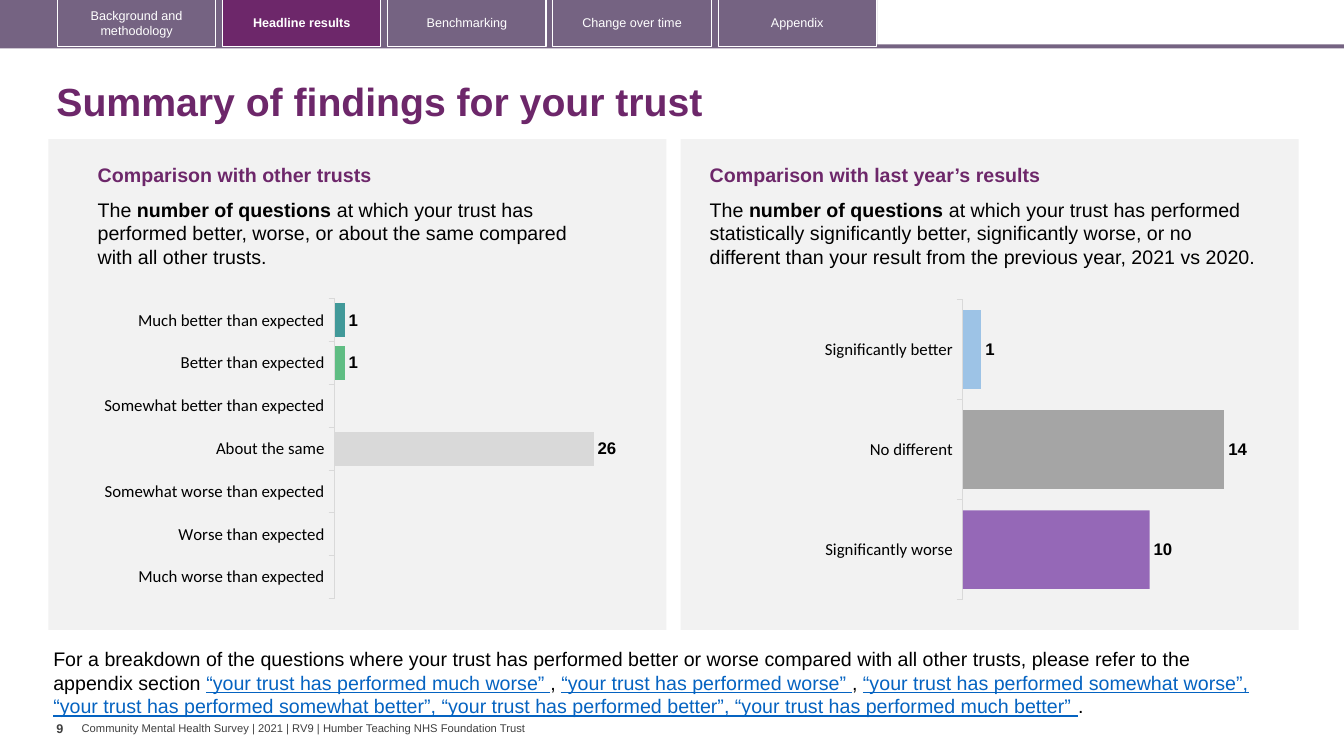
"""Build the summary slide of a trust's survey results."""
import dataclasses

import lxml.etree
import pptx
import pptx.chart.data
import pptx.dml.color
import pptx.enum.chart
import pptx.enum.shapes
import pptx.enum.text
import pptx.oxml
import pptx.oxml.ns
import pptx.util

Inches = pptx.util.Inches
Align = pptx.enum.text.PP_ALIGN
Anchor = pptx.enum.text.MSO_ANCHOR


@dataclasses.dataclass(frozen=True)
class Theme:
    """Hold the colours, fonts and type sizes."""
    plum: str = "6D276A"
    mauve: str = "756382"
    panel: str = "F2F2F2"
    white: str = "FFFFFF"
    black: str = "000000"
    grey: str = "404040"
    axis: str = "D9D9D9"
    link: str = "0563C1"
    teal: str = "419999"
    green: str = "5FBD83"
    lime: str = "A9D18E"
    pale: str = "D9D9D9"
    sand: str = "FFD966"
    gold: str = "F1BE48"
    rust: str = "E87722"
    sky: str = "9DC3E6"
    mid: str = "A5A5A5"
    violet: str = "7030A0"
    font: str = "Arial"
    label: str = "Calibri"
    head: int = 28
    body: int = 14
    chart: int = 12
    small: int = 9
    foot: int = 8


THEME = Theme()


def tint(code):
    """Turn a hex code into a colour."""
    return pptx.dml.color.RGBColor.from_string(code)


def style(font, size=THEME.body, color=THEME.black, bold=False, under=None, name=THEME.font):
    """Format a font."""
    font.name, font.size = name, pptx.util.Pt(size)
    font.bold, font.underline = bold, under
    font.color.rgb = tint(color)


def write(frame, text, align=Align.LEFT, anchor=Anchor.TOP, wrap=True, inset=None, **look):
    """Fill a frame with a string, or with (string, format) runs."""
    frame.word_wrap, frame.vertical_anchor = wrap, anchor
    if inset is not None:
        frame.margin_left = frame.margin_right = 0
        frame.margin_top = frame.margin_bottom = Inches(inset)
    para = frame.paragraphs[0]
    para.alignment = align
    for words, extra in [(text, {})] if isinstance(text, str) else text:
        run = para.add_run()
        run.text = words
        style(run.font, **{**look, **extra})


def add_text(slide, box, text, **look):
    """Add a text box."""
    shape = slide.shapes.add_textbox(*map(Inches, box))
    write(shape.text_frame, text, **look)


def add_block(slide, box, fill=None, line=None):
    """Add a flat block."""
    shape = slide.shapes.add_shape(pptx.enum.shapes.MSO_SHAPE.RECTANGLE, *map(Inches, box))
    shape.shadow.inherit = False
    if fill:
        shape.fill.solid()
        shape.fill.fore_color.rgb = tint(fill)
    else:
        shape.fill.background()
    if line:
        shape.line.color.rgb = tint(line)
        shape.line.width = pptx.util.Pt(0.75)
    else:
        shape.line.fill.background()
    return shape


def add_tabs(slide, names, live):
    """Add the row of tabs, with the live one lit."""
    add_block(slide, (-0.03, 0.44, 13.36, 0.04), THEME.mauve)
    add_block(slide, (-0.03, 0, 8.73, 0.47), THEME.mauve)
    for i, name in enumerate(names):
        lit = name == live
        tab = add_block(slide, (0.57 + 1.638 * i, -0.01, 1.57, 0.47),
                        THEME.plum if lit else None, THEME.white)
        write(tab.text_frame, name, align=Align.CENTER, anchor=Anchor.MIDDLE,
              size=THEME.small, color=THEME.white, bold=lit)


def set_plot(chart, **place):
    """Fix the inner plot area as shares of the chart."""
    area = chart.element.find(".//" + pptx.oxml.ns.qn("c:plotArea"))
    for old in area.findall(pptx.oxml.ns.qn("c:layout")):
        area.remove(old)
    parts = [("layoutTarget", "inner"), ("xMode", "edge"), ("yMode", "edge"), *place.items()]
    tags = "".join(f'<c:{tag} val="{val}"/>' for tag, val in parts)
    area.insert(0, pptx.oxml.parse_xml(
        f'<c:layout {pptx.oxml.ns.nsdecls("c")}><c:manualLayout>{tags}</c:manualLayout></c:layout>'))


def fade(fill, share):
    """Make a solid fill see-through, with share in percent."""
    color = fill.fore_color
    color.rgb = color.rgb
    return color, share


def paint(point, code, alpha=None):
    """Colour a bar, with alpha in percent."""
    fill = point.format.fill
    fill.solid()
    fill.fore_color.rgb = tint(code)
    if alpha:
        node = point.format.element if hasattr(point.format, "element") else None
        return node
    return None


def add_bars(slide, box, rows, top):
    """Add a bar chart from (name, value, colour, alpha) rows."""
    data = pptx.chart.data.CategoryChartData(number_format="0")
    data.categories = [row[0] for row in rows]
    data.add_series("Series 1", [row[1] for row in rows])
    kind = pptx.enum.chart.XL_CHART_TYPE.BAR_CLUSTERED
    chart = slide.shapes.add_chart(kind, *map(Inches, box), data).chart
    chart.has_legend = chart.has_title = False
    style(chart.font, size=10, name=THEME.label)
    axis = chart.category_axis
    axis.reverse_order = True
    axis.has_major_gridlines = False
    axis.major_tick_mark = pptx.enum.chart.XL_TICK_MARK.OUTSIDE
    axis.format.line.color.rgb = tint(THEME.axis)
    axis.format.line.width = pptx.util.Pt(0.75)
    style(axis.tick_labels.font, size=THEME.chart, name=THEME.label)
    scale = chart.value_axis
    scale.minimum_scale, scale.maximum_scale = 0, top
    scale.has_major_gridlines = scale.visible = False
    plot = chart.plots[0]
    plot.gap_width, plot.vary_by_categories = 27, False
    plot.has_data_labels = True
    labels = plot.data_labels
    labels.show_value = True
    labels.number_format, labels.number_format_is_linked = "0", False
    labels.position = pptx.enum.chart.XL_LABEL_POSITION.OUTSIDE_END
    style(labels.font, size=THEME.chart, bold=True)
    for i, (_, _, code, alpha) in enumerate(rows):
        fill = plot.series[0].points[i].format.fill
        fill.solid()
        fill.fore_color.rgb = tint(code)
        if alpha < 100:
            tone = chart.element.findall(".//" + pptx.oxml.ns.qn("c:dPt"))[i]
            tone = tone.find(".//" + pptx.oxml.ns.qn("a:srgbClr"))
            lxml.etree.SubElement(tone, pptx.oxml.ns.qn("a:alpha"), val=str(alpha * 1000))
    set_plot(chart, x=0.467, y=0.072, w=0.476, h=0.872)


def add_panel(slide, left, inner, width, head, tail):
    """Add a grey panel with its heading and lead text."""
    add_block(slide, (left, 1.38, 6.13, 4.87), THEME.panel)
    add_text(slide, (inner, 1.57, 5.52, 0.34), head, color=THEME.plum, bold=True)
    lead = [("The ", {}), ("number of questions ", {"bold": True}), (tail, {})]
    add_text(slide, (inner, 1.91, width, 0.81), lead)


def main():
    """Build and save the slide."""
    deck = pptx.Presentation()
    deck.slide_width, deck.slide_height = Inches(13.33), Inches(7.5)
    slide = deck.slides.add_slide(deck.slide_layouts[5])
    title = slide.shapes.title
    title.left, title.top, title.width, title.height = map(Inches, (0.46, 0.67, 12.49, 0.72))
    write(title.text_frame, "Summary of findings for your trust", anchor=Anchor.MIDDLE,
          size=THEME.head, color=THEME.plum, bold=True)
    title.text_frame.paragraphs[0].line_spacing = 0.9
    add_tabs(slide, ["Background and methodology", "Headline results", "Benchmarking",
                     "Change over time", "Appendix"], "Headline results")
    add_panel(slide, 0.48, 0.87, 5, "Comparison with other trusts",
              "at which your trust has performed better, worse, or about the same "
              "compared with all other trusts.")
    add_panel(slide, 6.75, 6.94, 5.65, "Comparison with last year’s results",
              "at which your trust has performed statistically significantly better, "
              "significantly worse, or no different than your result from the previous "
              "year, 2021 vs 2020.")
    add_bars(slide, (0.41, 2.72, 6.23, 3.41), [
        ("Much better than expected", 1, THEME.teal, 100),
        ("Better than expected", 1, THEME.green, 100),
        ("Somewhat better than expected", None, THEME.lime, 100),
        ("About the same", 26, THEME.pale, 100),
        ("Somewhat worse than expected", None, THEME.sand, 100),
        ("Worse than expected", None, THEME.gold, 100),
        ("Much worse than expected", None, THEME.rust, 100)], 30)
    add_bars(slide, (6.64, 2.73, 6.23, 3.41), [
        ("Significantly better", 1, THEME.sky, 100),
        ("No different", 14, THEME.mid, 100),
        ("Significantly worse", 10, THEME.violet, 71)], 16)
    link = {"color": THEME.link, "under": True}
    add_text(slide, (0.43, 6.37, 12.21, 0.81), [
        ("For a breakdown of the questions where your trust has performed better or worse "
         "compared with all other trusts, please refer to the appendix section ", {}),
        ("“your trust has performed much worse” ", link), (", ", {}),
        ("“your trust has performed worse” ", link), (", ", {}),
        ("“your trust has performed somewhat worse”, “your trust has performed somewhat "
         "better”, “your trust has performed better”, “your trust has performed much "
         "better” ", link), (".", {})])
    add_text(slide, (0.56, 7.1, 0.25, 0.4), "9", wrap=False, inset=0.05,
             size=THEME.small, color=THEME.grey, bold=True)
    add_text(slide, (0.81, 7.16, 4.48, 0.13),
             "Community Mental Health Survey | 2021 | RV9 | Humber Teaching NHS Foundation Trust",
             anchor=Anchor.MIDDLE, wrap=False, inset=0, size=THEME.foot, color=THEME.grey)


    deck.save("out.pptx")


if __name__ == "__main__":
    main()
